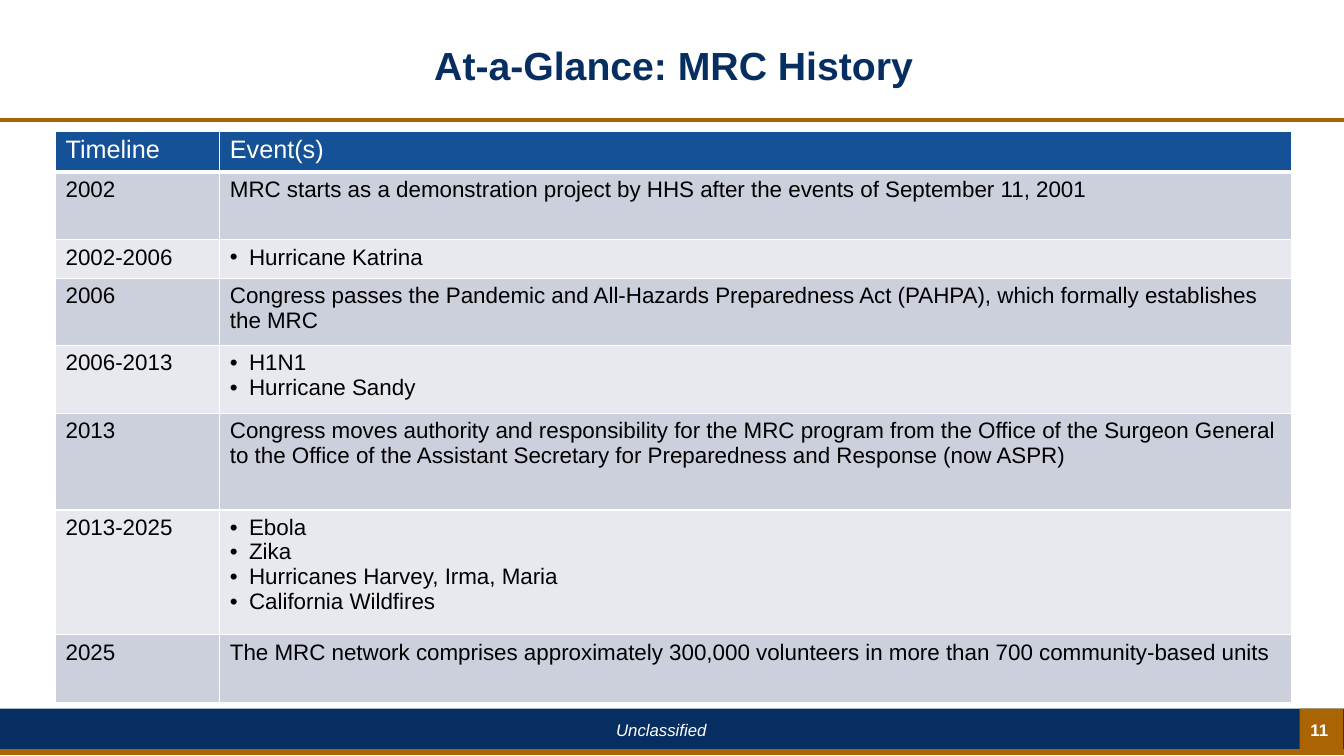
from dataclasses import dataclass

from lxml.etree import SubElement
from pptx import Presentation
from pptx.dml.color import RGBColor
from pptx.enum.shapes import MSO_CONNECTOR as Connector, MSO_SHAPE as Preset
from pptx.enum.text import MSO_ANCHOR as Anchor, MSO_AUTO_SIZE as AutoSize, PP_ALIGN as Align
from pptx.oxml.ns import qn
from pptx.util import Inches, Length, Pt

NAVY, BRONZE, BLUE = "062E61", "AA6404", "155197"
WHITE, BLACK = "FFFFFF", "000000"
BANDS = ("CCD0DD", "E8E9EF")
FONT = "Arial"
WIDTH, HEIGHT = Inches(13.33), Inches(7.5)


@dataclass(frozen=True)
class Area:
    left: float
    top: float
    width: float
    height: float

    def lengths(self) -> tuple[Length, ...]:
        return across(self.left), down(self.top), across(self.width), down(self.height)


@dataclass(frozen=True)
class Bar:
    area: Area
    fill: str


@dataclass(frozen=True)
class Rule:
    top: float
    weight: float


@dataclass(frozen=True)
class Era:
    years: str
    events: tuple[str, ...]
    height: float
    bulleted: bool = False


COLUMNS = (12.23, 79.74)
HEADER_HEIGHT = 5.47
TABLE_LEFT, TABLE_TOP = 4.13, 17.33
BARS = (
    Bar(Area(0, 93.73, 100, 5.73), NAVY),
    Bar(Area(96.7, 93.73, 3.23, 5.73), BRONZE),
)
TITLE_RULE, FOOTER_RULE = Rule(15.87, 3), Rule(99.47, 4.5)
ERAS = (
    Era("2002", ("MRC starts as a demonstration project by HHS after the events of "
                 "September 11, 2001",), 8.93),
    Era("2002-2006", ("Hurricane Katrina",), 5.07, True),
    Era("2006", ("Congress passes the Pandemic and All-Hazards Preparedness Act (PAHPA), "
                 "which formally establishes the MRC",), 8.93),
    Era("2006-2013", ("H1N1", "Hurricane Sandy"), 8.93, True),
    Era("2013", ("Congress moves authority and responsibility for the MRC program from the "
                 "Office of the Surgeon General to the Office of the Assistant Secretary for "
                 "Preparedness and Response (now ASPR)",), 12.8),
    Era("2013-2025", ("Ebola", "Zika", "Hurricanes Harvey, Irma, Maria",
                      "California Wildfires"), 16.53, True),
    Era("2025", ("The MRC network comprises approximately 300,000 volunteers in more than "
                 "700 community-based units",), 8.93),
)


def across(percent: float) -> Length:
    return Length(round(WIDTH * percent / 100))


def down(percent: float) -> Length:
    return Length(round(HEIGHT * percent / 100))


def paint(target, color: str) -> None:
    target.solid()
    target.fore_color.rgb = RGBColor.from_string(color)


def write(frame, *lines: str, size: float, color: str, bold: bool = False,
          italic: bool = False, align=Align.LEFT, spacing: float | None = None,
          bulleted: bool = False) -> None:
    for index, line in enumerate(lines):
        para = frame.add_paragraph() if index else frame.paragraphs[0]
        para.alignment = align
        if spacing:
            para.line_spacing = spacing
        if bulleted:
            add_bullet(para)
        span = para.add_run()
        span.text = line
        span.font.name, span.font.size = FONT, Pt(size)
        span.font.bold, span.font.italic = bold, italic
        paint(span.font.fill, color)


def add_bullet(para) -> None:
    properties = para._p.get_or_add_pPr()
    indent = Inches(0.19)
    properties.set("marL", str(indent))
    properties.set("indent", str(-indent))
    SubElement(properties, qn("a:buFont"), typeface=FONT)
    SubElement(properties, qn("a:buChar"), char="•")


def draw_bar(page, bar: Bar) -> None:
    box = page.shapes.add_shape(Preset.RECTANGLE, *bar.area.lengths())
    box.shadow.inherit = False
    paint(box.fill, bar.fill)
    box.line.fill.background()


def draw_rule(page, rule: Rule) -> None:
    y = down(rule.top)
    line = page.shapes.add_connector(Connector.STRAIGHT, 0, y, WIDTH, y)
    line.line.width = Pt(rule.weight)
    paint(line.line.fill, BRONZE)
    SubElement(line._element.spPr, qn("a:effectLst"))


def draw_label(page, text: str, area: Area, anchor=Anchor.MIDDLE, grow: bool = False,
               **style) -> None:
    frame = page.shapes.add_textbox(*area.lengths()).text_frame
    frame.word_wrap = True
    frame.auto_size = AutoSize.SHAPE_TO_FIT_TEXT if grow else AutoSize.NONE
    frame.vertical_anchor = anchor
    write(frame, text, align=Align.CENTER, **style)


def dress_cell(cell, fill: str, bottom: float = 1) -> None:
    properties = cell._tc.get_or_add_tcPr()
    for side, weight in (("L", 1), ("R", 1), ("T", 1), ("B", bottom)):
        edge = SubElement(properties, qn(f"a:ln{side}"), w=str(Pt(weight)))
        SubElement(SubElement(edge, qn("a:solidFill")), qn("a:srgbClr"), val=WHITE)
    paint(cell.fill, fill)


def draw_timeline(page) -> None:
    heights = (HEADER_HEIGHT, *(era.height for era in ERAS))
    area = Area(TABLE_LEFT, TABLE_TOP, sum(COLUMNS), sum(heights))
    table = page.shapes.add_table(len(heights), len(COLUMNS), *area.lengths()).table
    for column, width in zip(table.columns, COLUMNS):
        column.width = across(width)
    for row, height in zip(table.rows, heights):
        row.height = down(height)
    for cell, heading in zip(table.rows[0].cells, ("Timeline", "Event(s)")):
        dress_cell(cell, BLUE, bottom=3)
        write(cell.text_frame, heading, size=18, color=WHITE)
    for index, era in enumerate(ERAS):
        years, events = table.rows[index + 1].cells
        for cell in (years, events):
            dress_cell(cell, BANDS[index % 2])
        write(years.text_frame, era.years, size=16, color=BLACK)
        write(events.text_frame, *era.events, size=16, color=BLACK, bulleted=era.bulleted)


def main() -> None:
    deck = Presentation()
    deck.slide_width, deck.slide_height = WIDTH, HEIGHT
    page = deck.slides.add_slide(deck.slide_layouts[6])
    paint(page.background.fill, WHITE)
    draw_rule(page, TITLE_RULE)
    for bar in BARS:
        draw_bar(page, bar)
    draw_label(page, "Unclassified", Area(38.26, 94.53, 21.91, 4), anchor=Anchor.TOP,
               grow=True, size=12, color=WHITE, italic=True)
    draw_label(page, "11", Area(96.55, 94.93, 3.23, 3.2), size=12, color=WHITE, bold=True)
    draw_rule(page, FOOTER_RULE)
    draw_label(page, "At-a-Glance: MRC History", Area(6.98, 2, 86.27, 14), size=28,
               color=NAVY, bold=True, spacing=0.9)
    draw_timeline(page)
    deck.save("out.pptx")


if __name__ == "__main__":
    main()
